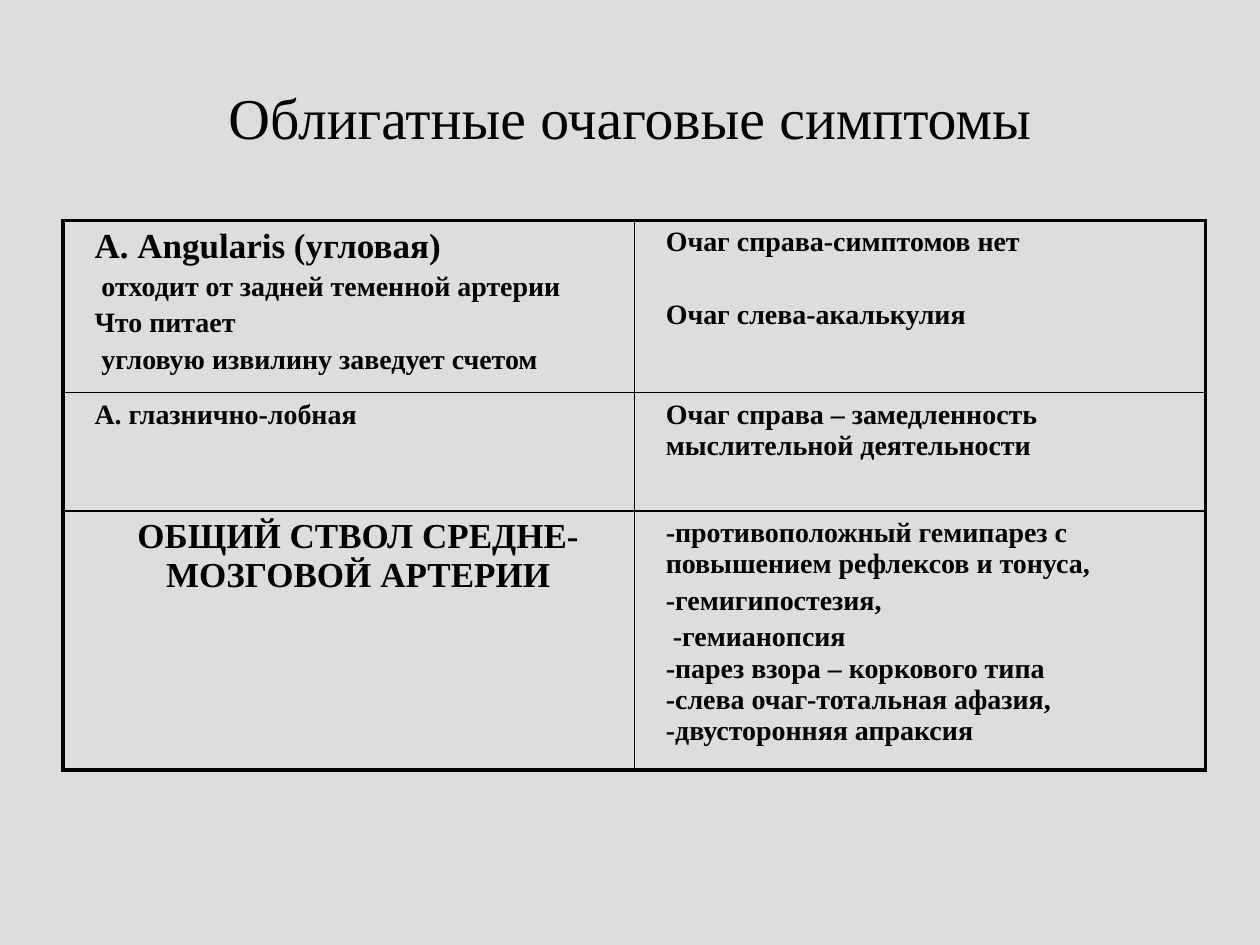
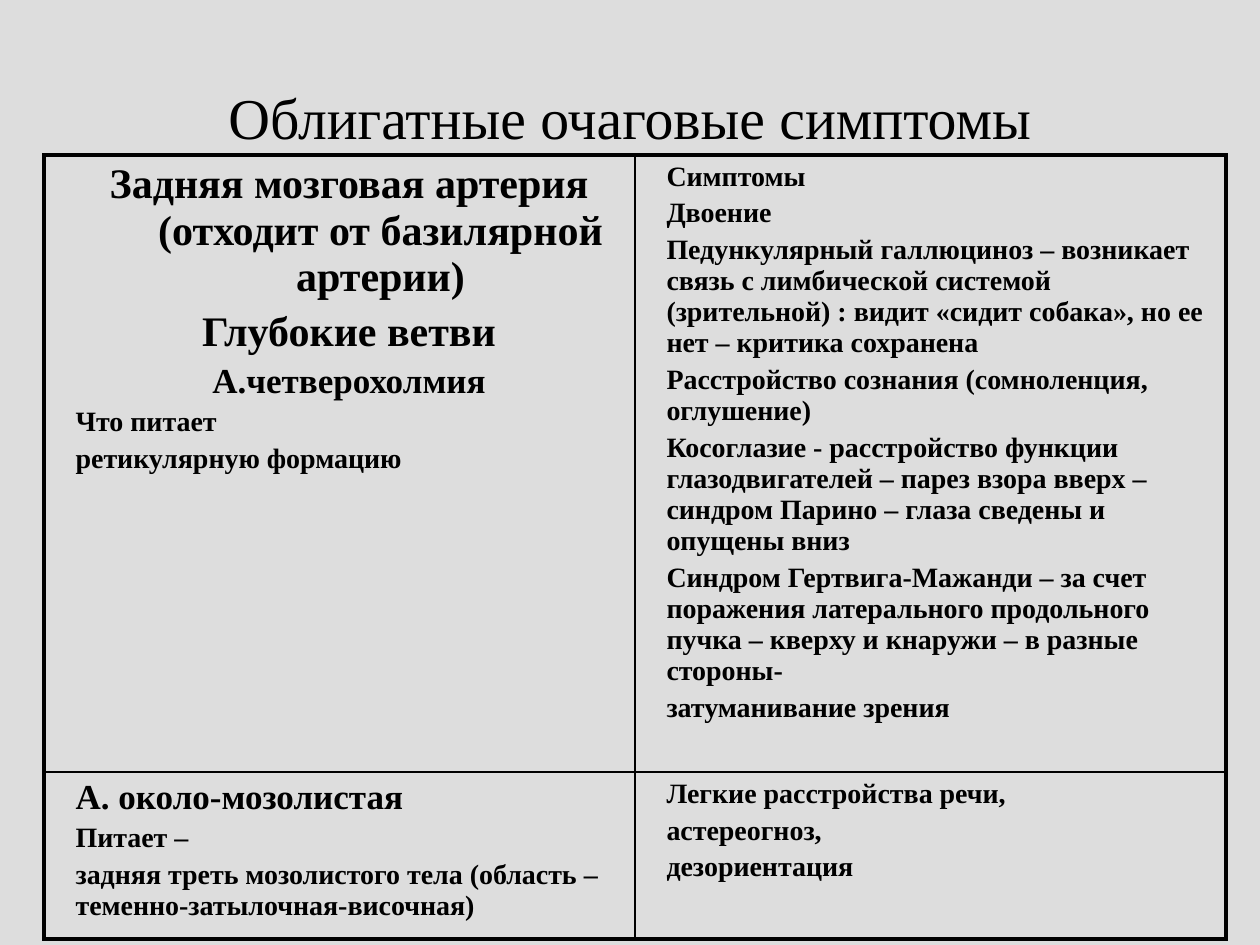
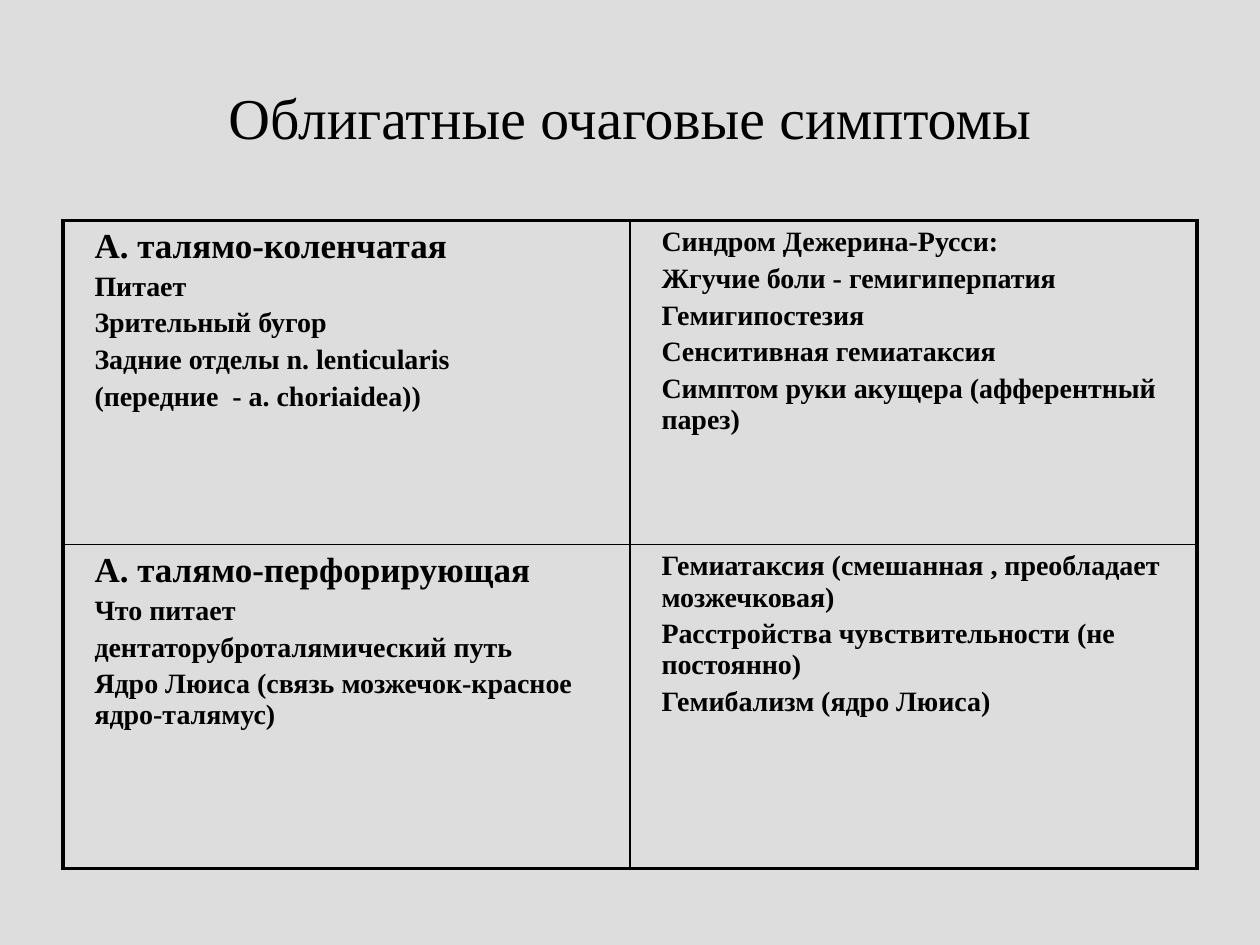
from dataclasses import dataclass

from lxml.etree import SubElement
from pptx import Presentation
from pptx.dml.color import RGBColor
from pptx.enum.text import MSO_ANCHOR, PP_ALIGN
from pptx.oxml.ns import qn
from pptx.util import Inches, Pt

# Shared look
BACKGROUND = RGBColor(0xDD, 0xDD, 0xDD)
INK = RGBColor(0x00, 0x00, 0x00)
FONT = "Times New Roman"
TITLE = "Облигатные очаговые симптомы"
TITLE_SIZE, HEAD_SIZE, BODY_SIZE = 33, 20, 16
OUTER, INNER = Pt(2.25), Pt(1)
INDENT, HANG = Inches(0.15), Inches(0.5)

# Grid of 40 columns by 30 rows
WIDTH, HEIGHT = Inches(10), Inches(7.5)
COL, ROW = WIDTH / 40, HEIGHT / 30
TITLE_BOX = (2, 1.2, 36, 5)


@dataclass
class Line:
    text: str
    size: int = BODY_SIZE
    centred: bool = False
    hanging: bool = False
    before: float = 0.2  # space above, in shares of the text size


def head(text, **style):
    return Line(text, HEAD_SIZE, **style)


def body(*texts, **style):
    return [Line(text, **style) for text in texts]


# Each table: left, top and width, row heights in grid units, then its cells
TABLES = [
    ((2, 7, 36.28), (5.12, 3.76, 7.64), [
        [[head("А. Angularis (угловая)", hanging=True),
          *body(" отходит от задней теменной артерии", "Что питает",
                " угловую извилину заведует счетом", hanging=True)],
         [Line("Очаг справа-симптомов нет"),
          Line("Очаг слева-акалькулия", before=1.5)]],
        [body("А. глазнично-лобная"),
         body("Очаг справа – замедленность мыслительной деятельности")],
        [[head("ОБЩИЙ СТВОЛ СРЕДНЕ-МОЗГОВОЙ АРТЕРИИ", centred=True)],
         body("-противоположный гемипарез с повышением рефлексов и тонуса,",
              "-гемигипостезия,",
              " -гемианопсия\n-парез взора – коркового типа\n"
              "-слева очаг-тотальная афазия, -двусторонняя апраксия")],
    ]),
    ((1.4, 4.92, 37.52), (18.24, 4.96), [
        [[*body("Задняя мозговая артерия (отходит от базилярной артерии)",
                "Глубокие ветви", size=24, centred=True, hanging=True),
          head("А.четверохолмия", centred=True, hanging=True),
          *body("Что питает", "ретикулярную формацию", hanging=True)],
         body("Симптомы",
              "Двоение",
              "Педункулярный галлюциноз – возникает связь с лимбической "
              "системой (зрительной) : видит «сидит собака», но ее нет – "
              "критика сохранена",
              "Расстройство сознания (сомноленция, оглушение)",
              "Косоглазие - расстройство функции глазодвигателей – парез "
              "взора вверх – синдром Парино – глаза сведены и опущены вниз",
              "Синдром Гертвига-Мажанди – за счет поражения латерального "
              "продольного пучка – кверху и кнаружи – в разные стороны-",
              "затуманивание зрения")],
        [[head("А. около-мозолистая"),
          *body("Питает –",
                "задняя треть мозолистого тела (область – "
                "теменно-затылочная-височная)")],
         body("Легкие расстройства речи,", "астереогноз,", "дезориентация")],
    ]),
    ((2, 7, 36), (10.29, 10.29), [
        [[head("А. талямо-коленчатая"),
          *body("Питает", "Зрительный бугор", "Задние отделы n. lenticularis",
                "(передние  - a. choriaidea))")],
         body("Синдром Дежерина-Русси:", "Жгучие боли - гемигиперпатия",
              "Гемигипостезия", "Сенситивная гемиатаксия",
              "Симптом руки акущера (афферентный парез)")],
        [[head("А. талямо-перфорирующая"),
          *body("Что питает", "дентаторуброталямический путь",
                "Ядро Люиса (связь мозжечок-красное ядро-талямус)")],
         body("Гемиатаксия (смешанная , преобладает мозжечковая)",
              "Расстройства чувствительности (не постоянно)",
              "Гемибализм (ядро Люиса)")],
    ]),
]


def set_font(p, size, bold=False):
    p.font.name, p.font.size, p.font.bold = FONT, Pt(size), bold
    p.font.color.rgb = INK


def add_title(s, box):
    left, top, width, height = box
    tf = s.shapes.add_textbox(int(left * COL), int(top * ROW),
                              int(width * COL), int(height * ROW)).text_frame
    tf.word_wrap = True
    tf.vertical_anchor = MSO_ANCHOR.MIDDLE
    p = tf.paragraphs[0]
    p.text = TITLE
    p.alignment = PP_ALIGN.CENTER
    set_font(p, TITLE_SIZE)


def fill_cell(cell, lines):
    tf = cell.text_frame
    for i, line in enumerate(lines):
        p = tf.add_paragraph() if i else tf.paragraphs[0]
        p.text = line.text
        p.alignment = PP_ALIGN.CENTER if line.centred else PP_ALIGN.LEFT
        p.space_before = Pt(line.size * line.before)
        set_font(p, line.size, bold=True)
        hang = HANG if line.hanging else 0
        pPr = p._p.get_or_add_pPr()
        pPr.set("marL", str(INDENT + hang))
        pPr.set("indent", str(-hang))


def set_borders(cell, at_edge):
    """Draw heavy lines on the sides that lie on the table's edge."""
    tcPr = cell._tc.get_or_add_tcPr()
    for side, outer in at_edge.items():
        ln = SubElement(tcPr, qn(f"a:{side}"), w=str(OUTER if outer else INNER))
        SubElement(SubElement(ln, qn("a:solidFill")), qn("a:srgbClr"),
                   val=str(INK))
    cell.fill.background()


def add_symptom_table(s, place, heights, rows):
    left, top, width = place
    n_rows, n_cols = len(rows), len(rows[0])
    table = s.shapes.add_table(n_rows, n_cols, int(left * COL), int(top * ROW),
                               int(width * COL), int(sum(heights) * ROW)).table
    table.first_row = table.horz_banding = False
    for r, cells in enumerate(rows):
        table.rows[r].height = int(heights[r] * ROW)
        for c, lines in enumerate(cells):
            cell = table.cell(r, c)
            fill_cell(cell, lines)
            set_borders(cell, {"lnL": c == 0, "lnR": c == n_cols - 1,
                               "lnT": r == 0, "lnB": r == n_rows - 1})


def add_symptom_slide(prs, place, heights, rows):
    s = prs.slides.add_slide(prs.slide_layouts[6])
    s.background.fill.solid()
    s.background.fill.fore_color.rgb = BACKGROUND
    add_title(s, TITLE_BOX)
    add_symptom_table(s, place, heights, rows)


def main():
    prs = Presentation()
    prs.slide_width, prs.slide_height = WIDTH, HEIGHT
    for place, heights, rows in TABLES:
        add_symptom_slide(prs, place, heights, rows)
    prs.save("out.pptx")


if __name__ == "__main__":
    main()
